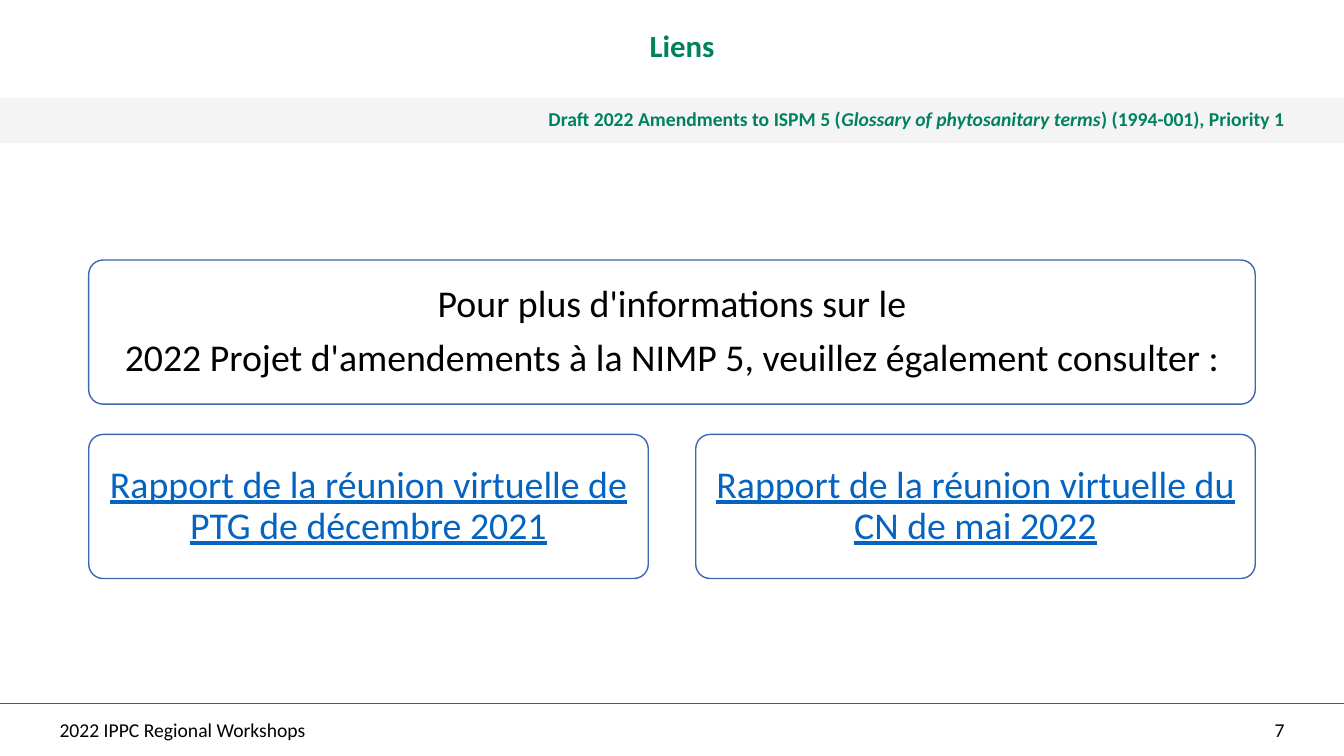
from lxml import etree
from pptx import Presentation
from pptx.dml.color import RGBColor
from pptx.enum.shapes import MSO_CONNECTOR, MSO_SHAPE
from pptx.enum.text import MSO_ANCHOR, PP_ALIGN
from pptx.oxml.ns import qn
from pptx.util import Inches, Pt

COLORS = {
    "green": "00825F",
    "band": "E7E6E6",
    "outline": "3E67B2",
    "link": "0563C1",
    "black": "000000",
    "white": "FFFFFF",
}
FONT = "Calibri"
WIDTH, HEIGHT = 13.33, 7.5
MARGIN = 0.59


def color(name):
    return RGBColor.from_string(COLORS[name])


def write(shape, paragraphs, size=14, tint="black", bold=None, underline=None,
          align=PP_ALIGN.LEFT, insets=(MARGIN, 0.05, MARGIN, 0.05), after=0):
    """Fill a shape with paragraphs, each a list of (text, italic) runs."""
    frame = shape.text_frame
    frame.word_wrap = True
    frame.vertical_anchor = MSO_ANCHOR.MIDDLE
    (frame.margin_left, frame.margin_top,
     frame.margin_right, frame.margin_bottom) = map(Inches, insets)
    for index, runs in enumerate(paragraphs):
        paragraph = frame.add_paragraph() if index else frame.paragraphs[0]
        paragraph.alignment = align
        paragraph.line_spacing = 0.9
        paragraph.space_after = Pt(after)
        for text, italic in runs:
            run = paragraph.add_run()
            run.text = text
            font = run.font
            font.name, font.size = FONT, Pt(size)
            font.bold, font.italic, font.underline = bold, italic, underline
            font.color.rgb = color(tint)


def add_text(slide, box, text, **text_format):
    shape = slide.shapes.add_textbox(*map(Inches, box))
    write(shape, [[(text, None)]], **text_format)


def add_box(slide, kind, box, fill):
    shape = slide.shapes.add_shape(kind, *map(Inches, box))
    shape.shadow.inherit = False
    shape.fill.solid()
    shape.fill.fore_color.rgb = color(fill)
    return shape


def add_header(slide, box):
    left, top, width, height = box
    add_text(slide, (left, top, width, 1), "Liens", size=22, tint="green", bold=True,
             align=PP_ALIGN.CENTER, insets=(MARGIN, 0, 0.39, 0.05))
    # Translucent band with the draft's name
    band_height = 0.45
    band = add_box(slide, MSO_SHAPE.RECTANGLE,
                   (left, top + height - band_height, width, band_height), "band")
    band.line.fill.background()
    fill_color = band.fill._xPr.find(qn("a:solidFill"))[0]
    etree.SubElement(fill_color, qn("a:alpha"), val="42000")
    write(band, [[("Draft 2022 Amendments to ISPM 5 (", None),
                  ("Glossary of phytosanitary terms", True),
                  (") (1994-001), Priority 1", None)]],
          tint="green", bold=True, align=PP_ALIGN.RIGHT)


def add_card(slide, box, lines, **text_format):
    card = add_box(slide, MSO_SHAPE.ROUNDED_RECTANGLE, box, "white")
    card.adjustments[0] = 0.1
    card.line.color.rgb = color("outline")
    card.line.width = Pt(1)
    write(card, [[(line, None)] for line in lines], size=27, after=9.45,
          align=PP_ALIGN.CENTER, insets=(0.11,) * 4, **text_format)


def add_links(slide, box):
    left, top, width, height = box
    row_gap, column_gap = 0.3, 0.47
    card_height = (height - row_gap) / 2
    card_width = (width - column_gap) / 2
    add_card(slide, (left, top, width, card_height),
             ["Pour plus d'informations sur le",
              "2022 Projet d'amendements à la NIMP 5, veuillez également consulter :"])
    reports = ["Rapport de la réunion virtuelle de PTG de décembre 2021",
               "Rapport de la réunion virtuelle du CN de mai 2022"]
    for column, report in enumerate(reports):
        add_card(slide, (left + column * (card_width + column_gap),
                         top + card_height + row_gap, card_width, card_height),
                 [report], tint="link", underline=True)


def add_footer(slide, box):
    left, top, width, height = box
    rule = slide.shapes.add_connector(MSO_CONNECTOR.STRAIGHT, Inches(left), Inches(top),
                                      Inches(left + width), Inches(top))
    rule.line.color.rgb = color("green")
    rule.line.width = Pt(1)
    etree.SubElement(rule._element.spPr, qn("a:effectLst"))
    text_top, text_height, number_width = top + 0.08, 0.38, 1.42
    add_text(slide, (left, text_top, 8.25, text_height), "2022 IPPC Regional Workshops")
    add_text(slide, (left + width - number_width, text_top, number_width, text_height),
             "7", align=PP_ALIGN.RIGHT)


def main():
    presentation = Presentation()
    presentation.slide_width = Inches(WIDTH)
    presentation.slide_height = Inches(HEIGHT)
    slide = presentation.slides.add_slide(presentation.slide_layouts[6])
    add_header(slide, (0, 0, WIDTH, 1.42))
    add_links(slide, (0.88, 2.58, 11.57, 3.16))
    add_footer(slide, (0, 6.98, WIDTH, HEIGHT - 6.98))
    presentation.save("out.pptx")


if __name__ == "__main__":
    main()
